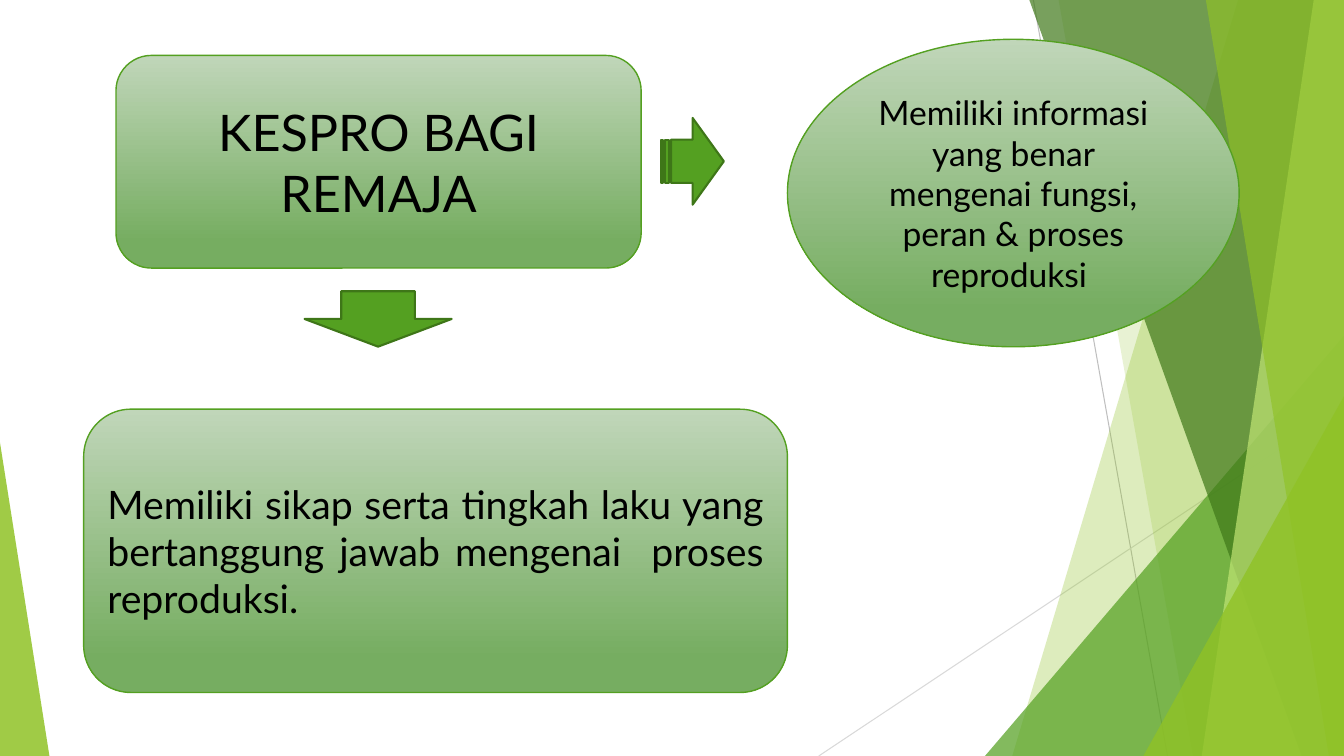
"""Build the slide on what reproductive health means for teenagers."""
import dataclasses
import typing

import lxml.etree
import pptx
import pptx.dml.color
import pptx.enum.shapes
import pptx.enum.text
import pptx.oxml.ns
import pptx.util

SHAPES = pptx.enum.shapes.MSO_SHAPE
ALIGN = pptx.enum.text.PP_ALIGN
WIDTH = pptx.util.Inches(13.33)
HEIGHT = pptx.util.Inches(7.5)


@dataclasses.dataclass(frozen=True)
class Theme:
    """Colours, type sizes and line widths of the slide."""
    font: str = "Lato"
    ink: str = "000000"
    green: str = "54A021"
    lime: str = "90C226"
    pale: str = "C0E474"
    forest: str = "3F7819"
    arrow_edge: str = "3E7618"
    card_top: str = "C0D6B9"
    card_bottom: str = "76AD61"
    card_stop: float = 0.88
    title_size: int = 36
    body_size: int = 28
    note_size: int = 24
    card_line: float = 1
    arrow_line: float = 1.5
    ray_line: float = 0.75


THEME = Theme()


@dataclasses.dataclass(frozen=True)
class Area:
    """A rectangle in percent of the slide's width and height."""
    left: float
    top: float
    width: float
    height: float

    def lengths(self) -> tuple[int, int, int, int]:
        """Return left, top, width and height as slide lengths."""
        return across(self.left), down(self.top), across(self.width), down(self.height)


@dataclasses.dataclass(frozen=True)
class Ray:
    """A thin line between two points in percent."""
    start: tuple[float, float]
    end: tuple[float, float]
    colour: str


@dataclasses.dataclass(frozen=True)
class Facet:
    """A full-height pane from a slanted left edge to the right slide edge."""
    top: float
    bottom: float
    colour: str
    opacity: int


@dataclasses.dataclass(frozen=True)
class Wedge:
    """A triangle whose peak stands at a share of its width."""
    area: Area
    peak: float
    colour: str
    opacity: int


@dataclasses.dataclass(frozen=True)
class Card:
    """A gradient shape with an optional text."""
    kind: SHAPES
    area: Area
    text: str = ""
    size: int = THEME.body_size
    align: ALIGN = ALIGN.CENTER


@dataclasses.dataclass(frozen=True)
class Arrow:
    """A block arrow between two cards."""
    kind: SHAPES
    area: Area


RAYS = [
    Ray((76.89, 0), (86.87, 100), "BFBFBF"),
    Ray((100, 53.73), (60.92, 100), "D9D9D9"),
]
PANES = [
    Facet(92.12, 75.32, THEME.lime, 30),
    Facet(78.77, 88.75, THEME.lime, 20),
    Wedge(Area(73.29, 44.4, 26.71, 55.6), 1, THEME.green, 72),
    Facet(76.59, 96.85, THEME.forest, 70),
    Facet(97.75, 89.42, THEME.pale, 70),
    Facet(89.72, 98.87, THEME.lime, 65),
    Wedge(Area(85.07, 52.4, 14.93, 47.6), 1, THEME.lime, 80),
    Wedge(Area(0, 58.53, 3.68, 41.47), 0, THEME.lime, 85),
]
TITLE = "KESPRO BAGI REMAJA"
TITLE_AREA = Area(8.63, 7.33, 39.08, 28.13)
CARDS = [
    Card(SHAPES.ROUNDED_RECTANGLE, TITLE_AREA),
    Card(SHAPES.OVAL, Area(58.59, 5.2, 33.61, 40.67),
         "Memiliki informasi yang benar mengenai fungsi, peran & proses reproduksi ",
         THEME.note_size),
    Card(SHAPES.ROUNDED_RECTANGLE, Area(6.23, 54.13, 52.36, 37.47),
         "Memiliki sikap serta tingkah laku yang bertanggung jawab mengenai  proses reproduksi.",
         align=ALIGN.JUSTIFY),
]
ARROWS = [
    Arrow(SHAPES.STRIPED_RIGHT_ARROW, Area(49.21, 15.6, 4.65, 11.47)),
    Arrow(SHAPES.DOWN_ARROW, Area(22.66, 38.53, 10.95, 7.33)),
]


def across(percent: float) -> int:
    """Turn a percentage of the slide's width into a length."""
    return round(WIDTH * percent / 100)


def down(percent: float) -> int:
    """Turn a percentage of the slide's height into a length."""
    return round(HEIGHT * percent / 100)


def rgb(colour: str) -> pptx.dml.color.RGBColor:
    """Return the colour object of a hexadecimal colour."""
    return pptx.dml.color.RGBColor.from_string(colour)


def set_line(shape: typing.Any, colour: str, width: float) -> None:
    """Give a shape or connector a solid line."""
    shape.line.color.rgb = rgb(colour)
    shape.line.width = pptx.util.Pt(width)


def write(box: typing.Any, text: str, size: int, align: ALIGN) -> None:
    """Put one formatted, vertically centred paragraph into a box."""
    frame = box.text_frame
    frame.text = text
    frame.word_wrap = True
    frame.auto_size = pptx.enum.text.MSO_AUTO_SIZE.NONE
    frame.vertical_anchor = pptx.enum.text.MSO_ANCHOR.MIDDLE
    para = frame.paragraphs[0]
    para.alignment = align
    for span in para.runs:
        span.font.name = THEME.font
        span.font.size = pptx.util.Pt(size)
        span.font.color.rgb = rgb(THEME.ink)


def draw_ray(page: typing.Any, ray: Ray) -> None:
    """Draw a thin background line."""
    line = page.shapes.add_connector(
        pptx.enum.shapes.MSO_CONNECTOR.STRAIGHT,
        across(ray.start[0]), down(ray.start[1]), across(ray.end[0]), down(ray.end[1]))
    set_line(line, ray.colour, THEME.ray_line)
    lxml.etree.SubElement(line._element.spPr, pptx.oxml.ns.qn("a:effectLst"))


def draw_pane(page: typing.Any, pane: Facet | Wedge) -> None:
    """Draw a translucent facet or wedge of the background."""
    if isinstance(pane, Facet):
        outline = page.shapes.build_freeform(across(pane.top), 0)
        outline.add_line_segments(
            [(WIDTH, 0), (WIDTH, HEIGHT), (across(pane.bottom), HEIGHT)], close=True)
        shape = outline.convert_to_shape()
    else:
        shape = page.shapes.add_shape(SHAPES.ISOSCELES_TRIANGLE, *pane.area.lengths())
        shape.adjustments[0] = pane.peak
    shape.shadow.inherit = False
    shape.line.fill.background()
    shape.fill.solid()
    shape.fill.fore_color.rgb = rgb(pane.colour)
    colour = next(shape._element.spPr.iter(pptx.oxml.ns.qn("a:srgbClr")))
    alpha = lxml.etree.SubElement(colour, pptx.oxml.ns.qn("a:alpha"))
    alpha.set("val", str(pane.opacity * 1000))


def draw_card(page: typing.Any, card: Card) -> None:
    """Draw a gradient card and its text."""
    shape = page.shapes.add_shape(card.kind, *card.area.lengths())
    shape.shadow.inherit = False
    shape.fill.gradient()
    shape.fill.gradient_angle = 270
    first, last = shape.fill.gradient_stops
    first.color.rgb, first.position = rgb(THEME.card_top), 0
    last.color.rgb, last.position = rgb(THEME.card_bottom), THEME.card_stop
    set_line(shape, THEME.green, THEME.card_line)
    if card.text:
        write(shape, card.text, card.size, card.align)


def draw_arrow(page: typing.Any, arrow: Arrow) -> None:
    """Draw a solid block arrow."""
    shape = page.shapes.add_shape(arrow.kind, *arrow.area.lengths())
    shape.shadow.inherit = False
    shape.fill.solid()
    shape.fill.fore_color.rgb = rgb(THEME.green)
    set_line(shape, THEME.arrow_edge, THEME.arrow_line)


def place_title(page: typing.Any) -> None:
    """Set the title placeholder on top of its card."""
    title = page.shapes.title
    title.left, title.top, title.width, title.height = TITLE_AREA.lengths()
    write(title, TITLE, THEME.title_size, ALIGN.CENTER)
    page.shapes._spTree.append(title._element)


def main() -> None:
    """Build and save the deck."""
    deck = pptx.Presentation()
    deck.slide_width, deck.slide_height = WIDTH, HEIGHT
    page = deck.slides.add_slide(deck.slide_layouts.get_by_name("Title Only"))
    for draw, items in ((draw_ray, RAYS), (draw_pane, PANES),
                        (draw_card, CARDS), (draw_arrow, ARROWS)):
        for item in items:
            draw(page, item)
    place_title(page)
    deck.save("out.pptx")


if __name__ == "__main__":
    main()
